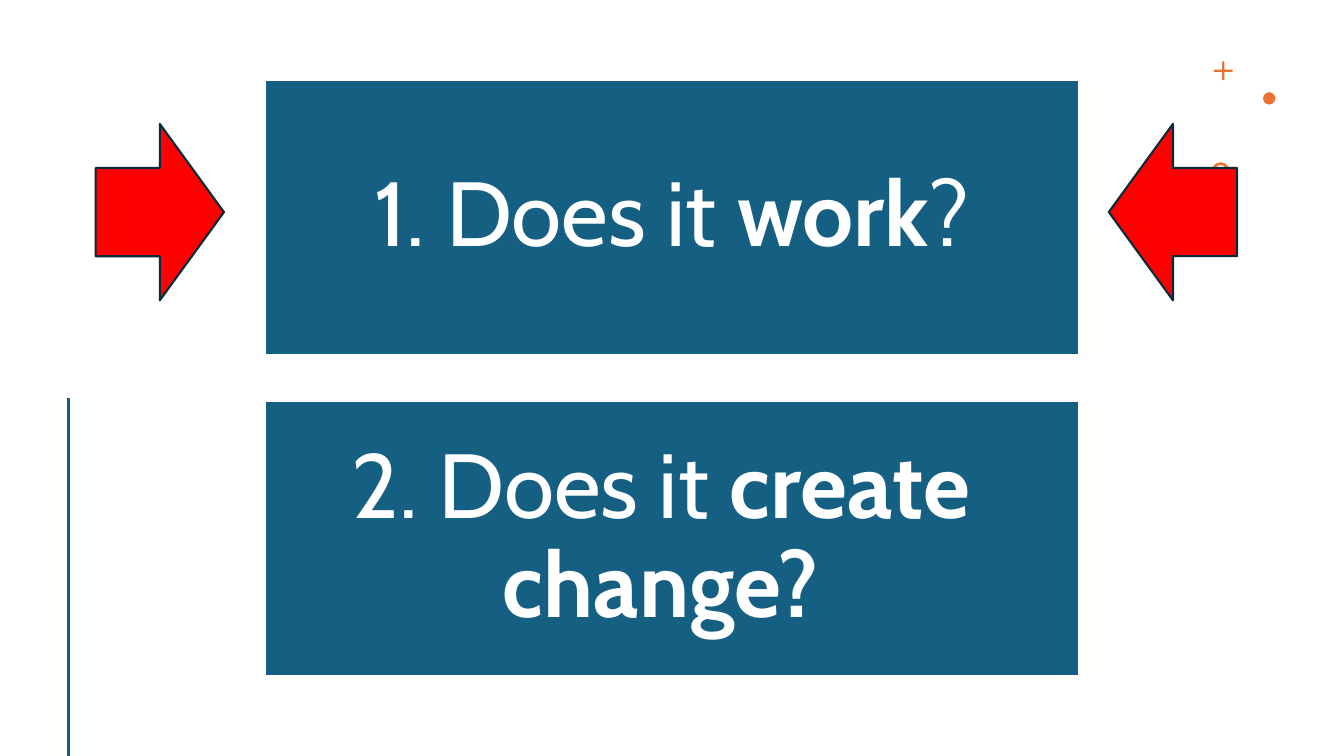
from pptx import Presentation
from pptx.dml.color import RGBColor
from pptx.enum.shapes import MSO_CONNECTOR as Connector, MSO_SHAPE as Shape
from pptx.enum.text import MSO_ANCHOR as Anchor, PP_ALIGN as Align
from pptx.oxml.ns import qn
from pptx.util import Pt
from lxml.etree import SubElement

BLUE = RGBColor(0x15, 0x60, 0x82)
NAVY = RGBColor(0x09, 0x2A, 0x39)
ORANGE = RGBColor(0xE9, 0x71, 0x32)
RED = RGBColor(0xFF, 0x00, 0x00)
WHITE = RGBColor(0xFF, 0xFF, 0xFF)


def add_figure(page, kind, box, fill, line=None):
    figure = page.shapes.add_shape(kind, *map(Pt, box))
    figure.shadow.inherit = False
    figure.fill.solid()
    figure.fill.fore_color.rgb = fill
    if line is None:
        figure.line.fill.background()
    else:
        figure.line.color.rgb = line
        figure.line.width = Pt(1.5)
    return figure


def add_text(para, text, size=65, bold=False, color=WHITE, font="Cabin"):
    span = para.add_run()
    span.text = text
    span.font.name = font
    span.font.size = Pt(size)
    span.font.bold = bold
    span.font.color.rgb = color


def add_ornaments(page, left, top):
    plus = add_figure(page, Shape.CROSS, (left + 1.4, top, 13.4, 13.4), ORANGE)
    plus.adjustments[0] = 0.44
    add_figure(page, Shape.OVAL, (left + 36.5, top + 22, 8.8, 8.8), ORANGE)
    ring = add_figure(page, Shape.DONUT, (left, top + 72, 12.4, 12.4), ORANGE)
    ring.adjustments[0] = 0.15


def add_side_line(page, x, top, bottom):
    line = page.shapes.add_connector(Connector.STRAIGHT, Pt(x), Pt(top), Pt(x), Pt(bottom))
    line.line.color.rgb = BLUE
    line.line.width = Pt(2)
    SubElement(line._element.spPr, qn("a:effectLst"))


def add_question(page, box, spans, right_inset):
    card = add_figure(page, Shape.RECTANGLE, box, BLUE, WHITE)
    frame = card.text_frame
    frame.word_wrap = True
    frame.vertical_anchor = Anchor.MIDDLE
    frame.margin_left = frame.margin_top = frame.margin_bottom = Pt(19.5)
    frame.margin_right = Pt(right_inset)
    para = frame.paragraphs[0]
    para.alignment = Align.CENTER
    para.line_spacing = 0.9
    for text, bold in spans:
        add_text(para, text, bold=bold)


def add_questions(page, left, top, width, height, gap):
    questions = [
        ([("1. Does it ", False), ("work", True), ("?", False)], 19.5),
        ([("2. Does it ", False), ("create change?", True)], 35),
    ]
    for row, (spans, right_inset) in enumerate(questions):
        box = (left, top + row * (height + gap), width, height)
        add_question(page, box, spans, right_inset)


def add_arrows(page, top, width, height):
    for left, turn in ((792, 0), (68.3, 180)):
        arrow = add_figure(page, Shape.LEFT_ARROW, (left, top, width, height), RED, NAVY)
        arrow.rotation = turn


def main():
    deck = Presentation()
    deck.slide_width = Pt(960)
    deck.slide_height = Pt(540)
    page = deck.slides.add_slide(deck.slide_layouts[6])
    add_ornaments(page, 865.7, 43.9)
    add_side_line(page, 49, 284, 540)
    add_questions(page, 189.5, 57, 581, 196.5, 33)
    add_arrows(page, 88.5, 91.7, 126)
    deck.save("out.pptx")


if __name__ == "__main__":
    main()
